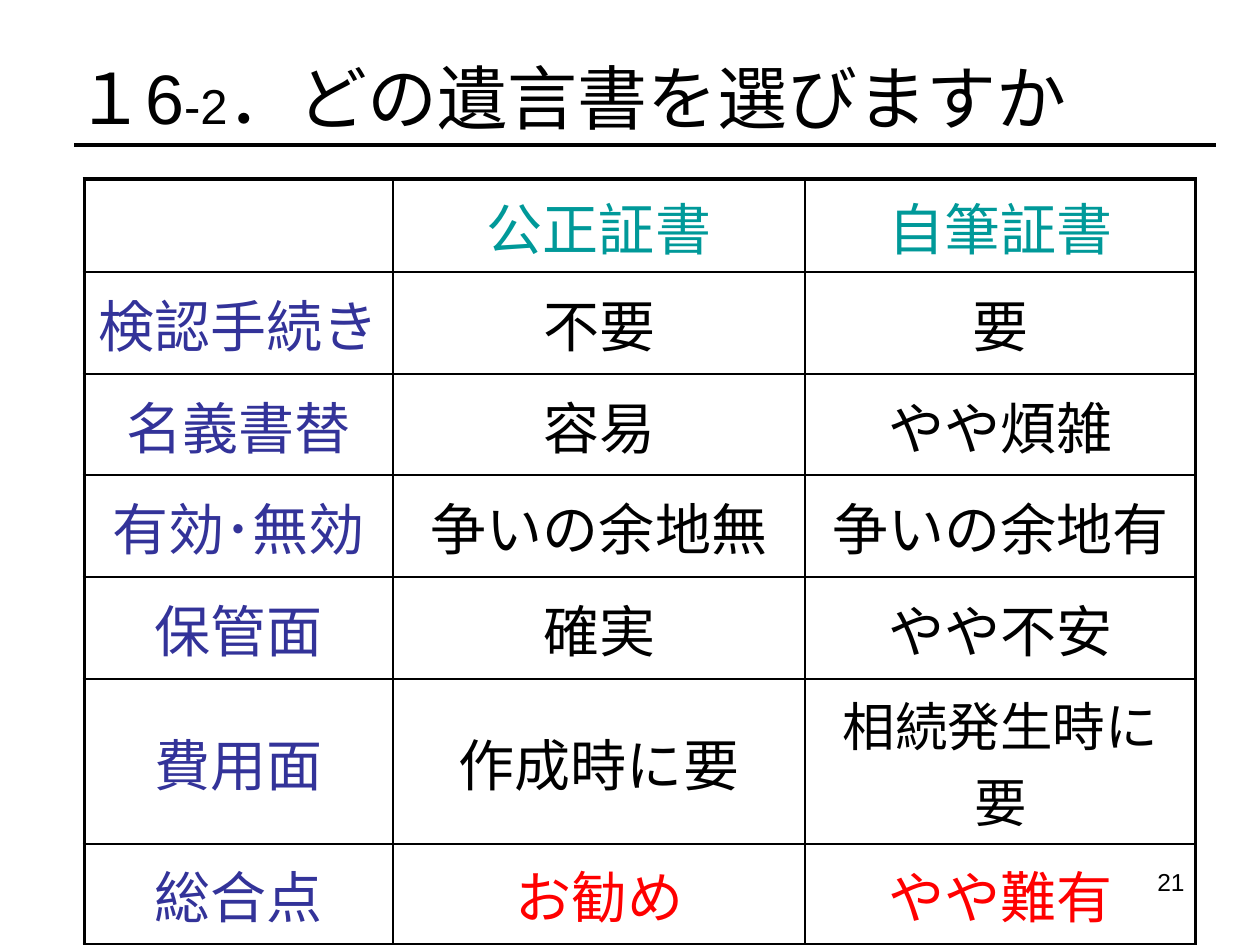
from lxml import etree
from pptx import Presentation
from pptx.dml.color import RGBColor
from pptx.enum.shapes import MSO_CONNECTOR
from pptx.enum.text import MSO_ANCHOR, PP_ALIGN
from pptx.oxml.ns import qn
from pptx.util import Inches, Pt

STRAIGHT = MSO_CONNECTOR.STRAIGHT
TOP, MIDDLE = MSO_ANCHOR.TOP, MSO_ANCHOR.MIDDLE
LEFT, CENTER, RIGHT = PP_ALIGN.LEFT, PP_ALIGN.CENTER, PP_ALIGN.RIGHT

BLACK = RGBColor(0x00, 0x00, 0x00)
TEAL = RGBColor(0x00, 0x99, 0x99)
INDIGO = RGBColor(0x33, 0x33, 0x99)
RED = RGBColor(0xFF, 0x00, 0x00)

FONT = "Arial"
THIN, THICK = 1, 2.25

TITLE_RUNS = [("１6", 40), ("‐2", 28), ("．どの遺言書を選びますか", 40)]
COMPARISON = [
    ("", "公正証書", "自筆証書"),
    ("検認手続き", "不要", "要"),
    ("名義書替", "容易", "やや煩雑"),
    ("有効･無効", "争いの余地無", "争いの余地有"),
    ("保管面", "確実", "やや不安"),
    ("費用面", "作成時に要", "相続発生時に要"),
    ("総合点", "お勧め", "やや難有"),
]
COLUMN_WIDTHS = [2.45, 3.27, 3.1]
# The cost row is tall enough for two lines of text
ROW_HEIGHTS = [0.74, 0.81, 0.8, 0.81, 0.81, 1.31, 0.8]
LAST_ROW, LAST_COLUMN = len(ROW_HEIGHTS) - 1, len(COLUMN_WIDTHS) - 1
SMALLER_CELL = (5, 2)


def add_text(slide, box, runs, align, anchor):
    """Add a text box whose runs are (text, size) pairs."""
    frame = slide.shapes.add_textbox(*map(Inches, box)).text_frame
    frame.word_wrap = True
    frame.vertical_anchor = anchor
    paragraph = frame.paragraphs[0]
    paragraph.alignment = align
    paragraph.font.name = FONT
    paragraph.font.color.rgb = BLACK
    for text, size in runs:
        run = paragraph.add_run()
        run.text = text
        run.font.size = Pt(size)


def add_rule(slide, left, right, y):
    rule = slide.shapes.add_connector(
        STRAIGHT, Inches(left), Inches(y), Inches(right), Inches(y))
    rule.line.color.rgb = BLACK
    rule.line.width = Pt(THICK)
    etree.SubElement(rule._element.spPr, qn("a:effectLst"))


def set_borders(cell, row, column):
    """Draw thick lines on the table's outer edges and thin ones inside."""
    outer_sides = {
        "a:lnL": column == 0,
        "a:lnR": column == LAST_COLUMN,
        "a:lnT": row == 0,
        "a:lnB": row == LAST_ROW,
    }
    properties = cell._tc.get_or_add_tcPr()
    for side, is_outer in outer_sides.items():
        width = Pt(THICK if is_outer else THIN)
        border = etree.SubElement(properties, qn(side), w=str(width))
        fill = etree.SubElement(border, qn("a:solidFill"))
        etree.SubElement(fill, qn("a:srgbClr"), val=str(BLACK))


def cell_color(row, column):
    if row == 0:
        return TEAL
    if column == 0:
        return INDIGO
    return RED if row == LAST_ROW else BLACK


def fill_cell(cell, text, row, column):
    set_borders(cell, row, column)
    cell.fill.background()
    cell.vertical_anchor = MIDDLE
    cell.text = text
    paragraph = cell.text_frame.paragraphs[0]
    paragraph.alignment = CENTER
    font = paragraph.font
    font.name = FONT
    font.size = Pt(30 if (row, column) == SMALLER_CELL else 32)
    font.color.rgb = cell_color(row, column)


def add_comparison(slide, left, top):
    table = slide.shapes.add_table(
        len(ROW_HEIGHTS), len(COLUMN_WIDTHS), Inches(left), Inches(top),
        Inches(sum(COLUMN_WIDTHS)), Inches(sum(ROW_HEIGHTS))).table
    table.first_row = False
    table.horz_banding = False
    for column, width in zip(table.columns, COLUMN_WIDTHS):
        column.width = Inches(width)
    for row, height in zip(table.rows, ROW_HEIGHTS):
        row.height = Inches(height)
    for r, texts in enumerate(COMPARISON):
        for c, text in enumerate(texts):
            fill_cell(table.cell(r, c), text, r, c)


def main():
    prs = Presentation()
    prs.slide_width, prs.slide_height = Inches(10), Inches(7.5)
    slide = prs.slides.add_slide(prs.slide_layouts[6])

    # Title
    add_text(slide, (0.5, 0.3, 9, 0.93), TITLE_RUNS, LEFT, MIDDLE)
    # Comparison of the two kinds of will
    add_comparison(slide, 0.67, 1.42)
    # Line under the title
    add_rule(slide, 0.59, 9.65, 1.15)
    # Page number
    add_text(slide, (7.17, 6.83, 2.33, 0.52), [("21", 14)], RIGHT, TOP)

    prs.save("out.pptx")


if __name__ == "__main__":
    main()
